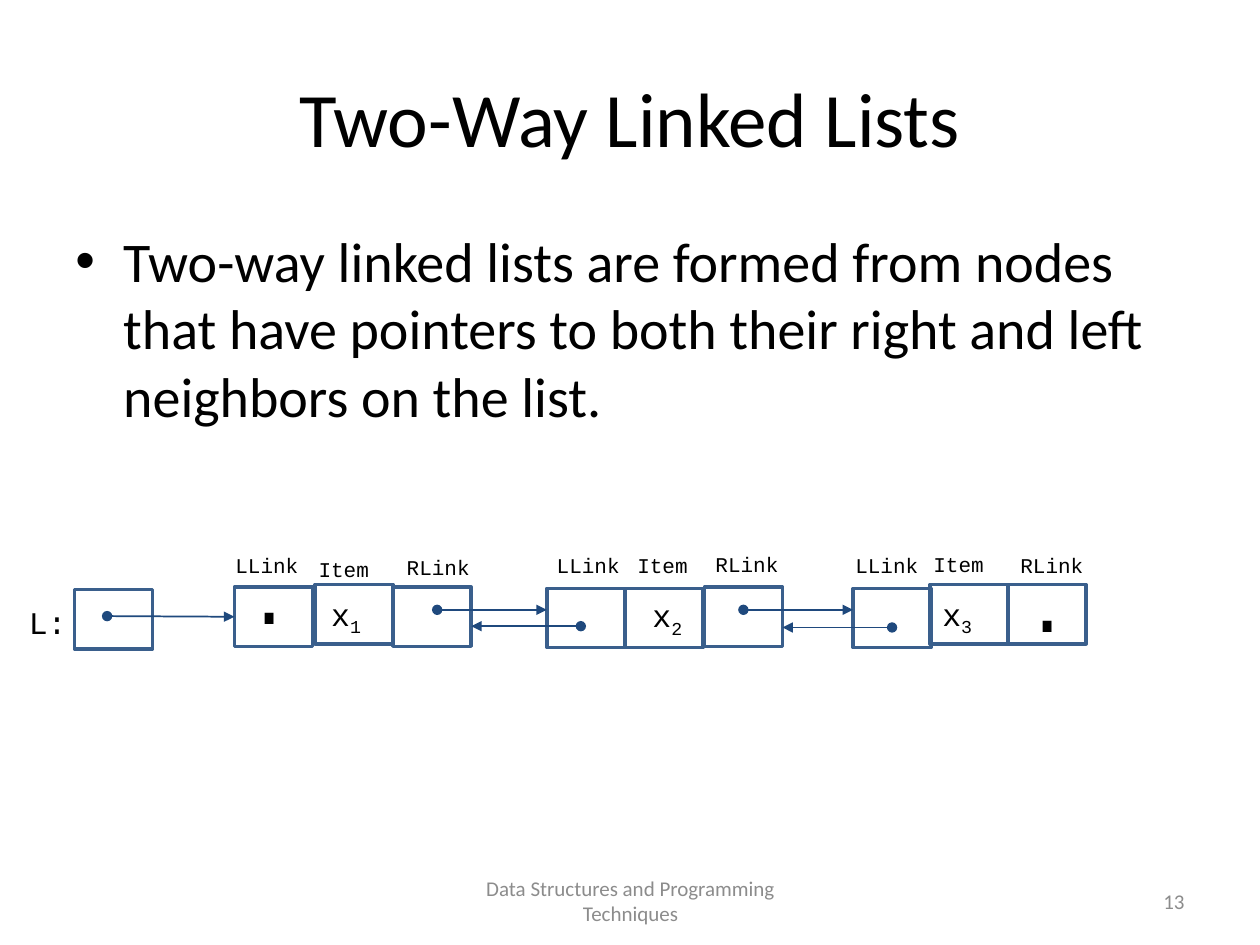
from dataclasses import dataclass

from lxml import etree
from pptx import Presentation
from pptx import util as u
from pptx.dml.color import RGBColor
from pptx.enum import shapes, text
from pptx.oxml import ns


@dataclass(frozen=True)
class Theme:
    body: str = "Calibri"
    code: str = "Courier New"
    ink: str = "000000"
    muted: str = "8C8C8C"
    box: str = "3A5F8C"
    arrow: str = "1F497D"
    title_pt: int = 44
    body_pt: int = 32
    item_pt: int = 18
    small_pt: int = 12


T = Theme()
LEFT, CENTER, RIGHT = text.PP_ALIGN.LEFT, text.PP_ALIGN.CENTER, text.PP_ALIGN.RIGHT
TOP, MIDDLE = text.MSO_ANCHOR.TOP, text.MSO_ANCHOR.MIDDLE
FIT, FIXED = text.MSO_AUTO_SIZE.SHAPE_TO_FIT_TEXT, text.MSO_AUTO_SIZE.NONE

prs = Presentation()
prs.slide_width, prs.slide_height = u.Inches(10), u.Inches(7.5)
s = prs.slides.add_slide(prs.slide_layouts[6])


def add_text(at, words, size, font=T.code, color=T.ink, align=LEFT,
             anchor=TOP, auto_size=FIT, sub=""):
    """Add a one-paragraph text box, with an optional subscript run."""
    tf = s.shapes.add_textbox(*map(u.Inches, at)).text_frame
    frame = {"word_wrap": True, "auto_size": auto_size, "vertical_anchor": anchor}
    for name, value in frame.items():
        setattr(tf, name, value)
    p = tf.paragraphs[0]
    p.alignment = align
    for part in filter(None, (words, sub)):
        r = p.add_run()
        r.text = part
        for name, value in {"name": font, "size": u.Pt(size)}.items():
            setattr(r.font, name, value)
        r.font.color.rgb = RGBColor.from_string(color)
    if sub:
        r.font._element.set("baseline", "-25000")
    return p


def add_arrow(start, end):
    """Add a pointer with a dot at its start and an arrowhead at its end."""
    c = s.shapes.add_connector(shapes.MSO_CONNECTOR.STRAIGHT,
                               *map(u.Inches, (*start, *end)))
    c.line.width = u.Pt(1)
    c.line.color.rgb = RGBColor.from_string(T.arrow)
    ln = c.line._get_or_add_ln()
    for tag, kind in {"a:headEnd": "oval", "a:tailEnd": "triangle"}.items():
        etree.SubElement(ln, ns.qn(tag)).set("type", kind)
    etree.SubElement(c._element.spPr, ns.qn("a:effectLst"))
    return c


# Title and bullet
add_text((0.5, 0.3, 9, 1.25), "Two-Way Linked Lists", T.title_pt, T.body,
         align=CENTER, anchor=MIDDLE, auto_size=FIXED)
p = add_text((0.5, 1.75, 9, 4.95),
             "Two-way linked lists are formed from nodes that have pointers "
             "to both their right and left neighbors on the list.",
             T.body_pt, T.body, auto_size=FIXED)
p.space_before = u.Pt(6.4)
pPr = p._p.get_or_add_pPr()
for name, value in {"marL": 0.38, "indent": -0.38}.items():
    pPr.set(name, str(u.Inches(value)))
etree.SubElement(pPr, ns.qn("a:buFont")).set("typeface", "Arial")
etree.SubElement(pPr, ns.qn("a:buChar")).set("char", "•")

# List head and the LLink, Item and RLink cells of each node
cells = [(0.59, 4.68),
         (1.86, 4.66), (2.5, 4.64), (3.12, 4.66),
         (4.34, 4.67), (4.96, 4.67), (5.59, 4.66),
         (6.77, 4.67), (7.38, 4.64), (8, 4.64)]
boxes = []
for x, y in cells:
    sp = s.shapes.add_shape(shapes.MSO_SHAPE.RECTANGLE,
                            *map(u.Inches, (x, y, 0.62, 0.47)))
    sp.shadow.inherit = False
    sp.fill.background()
    sp.line.width = u.Pt(2)
    sp.line.color.rgb = RGBColor.from_string(T.box)
    boxes.append(sp)

# Field names above the cells
fields = [((1.77, 4.34), (2.43, 4.37), (3.13, 4.35)),
          ((4.32, 4.34), (4.96, 4.34), (5.58, 4.33)),
          ((6.69, 4.34), (7.31, 4.33), (8, 4.34))]
for node in fields:
    for (x, y), name in zip(node, ("LLink", "Item", "RLink")):
        add_text((x, y, 0.76, 0.3), name, T.small_pt)

# Items, list name and null links
add_text((0.13, 4.74, 0.71, 0.4), "L:", T.item_pt)
for i, (x, y) in enumerate([(2.53, 4.67), (5.08, 4.68), (7.38, 4.67)], 1):
    add_text((x, y, 0.55, 0.4), "x", T.item_pt, sub=str(i))
for x, y in [(1.86, 4.3), (8.03, 4.36)]:
    add_text((x, y, 1, 0.84), ".", T.title_pt)

# Pointers: list head, then right and left links
add_arrow((0.85, 4.89), (1.86, 4.89)).end_connect(boxes[1], 1)
for x, y, reach in [(3.47, 4.84, 0.87), (5.9, 4.84, 0.87),
                    (4.61, 4.97, -0.87), (7.08, 4.98, -0.87)]:
    add_arrow((x, y), (x + reach, y))

# Footer and slide number
for at, words, align in [
        ((3.42, 6.95, 3.17, 0.4), "Data Structures and Programming Techniques", CENTER),
        ((7.17, 6.95, 2.33, 0.4), "13", RIGHT)]:
    add_text(at, words, T.small_pt, T.body, T.muted, align, MIDDLE, FIXED)

prs.save("out.pptx")
